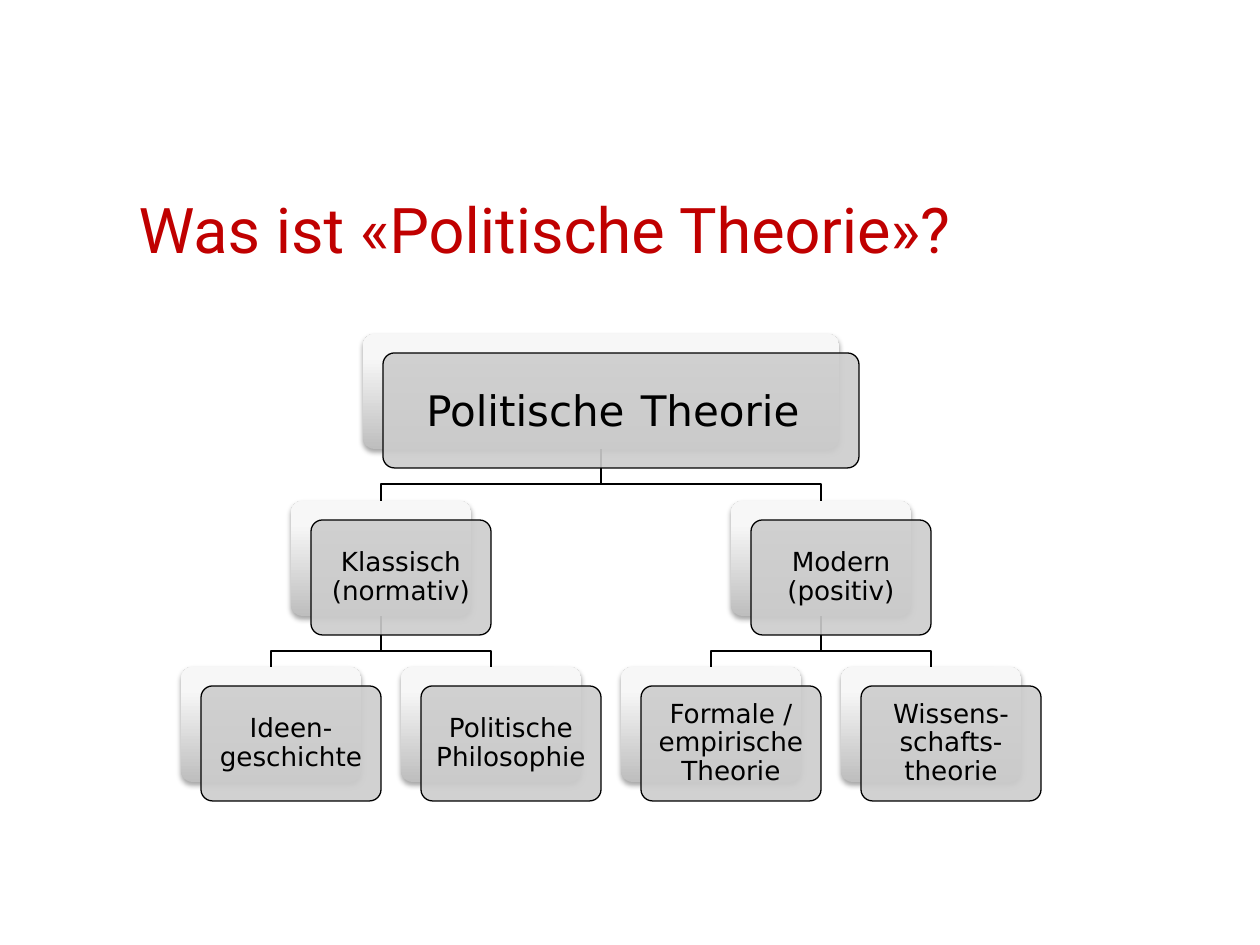
from dataclasses import dataclass

from lxml.etree import SubElement
from pptx import Presentation
from pptx.dml.color import RGBColor
from pptx.enum.shapes import MSO_SHAPE
from pptx.enum.text import MSO_ANCHOR, MSO_AUTO_SIZE, PP_ALIGN
from pptx.oxml.ns import qn
from pptx.util import Emu, Pt

SCALE = 914400 / 126  # EMU per px


@dataclass(frozen=True)
class Theme:
    title: RGBColor = RGBColor(0xC0, 0x00, 0x00)
    ink: RGBColor = RGBColor(0x00, 0x00, 0x00)
    card: RGBColor = RGBColor(0xCC, 0xCC, 0xCC)
    dark: RGBColor = RGBColor(0xBE, 0xBE, 0xBE)
    light: RGBColor = RGBColor(0xF7, 0xF7, 0xF7)
    head: str = "Roboto"
    body: str = "DejaVu Sans"
    big: int = 36
    root: int = 24
    gap: int = 29
    node: int = 15
    line: float = 0.75


@dataclass
class Node:
    x: int  # centre of the back card
    level: int
    runs: list
    kids: tuple = ()
    wide: int = 180
    inset: int = 11

    @property
    def top(self):
        return 334 + 167 * self.level - self.level // 2


HIGH = 115
SHIFT = (20, 19)  # front card against back card
BEND = 35


def px(value):
    return Emu(round(value * SCALE))


def apply(target, values):
    for name, value in values.items():
        setattr(target, name, value)


class Deck:
    def __init__(self, theme):
        self.theme = theme
        self.file = Presentation()
        apply(self.file, {"slide_width": px(1260), "slide_height": px(945)})
        self.slide = self.file.slides.add_slide(self.file.slide_layouts[5])

    def label(self, para, text, size, face, color):
        run = para.add_run()
        run.text = text
        apply(run.font, {"size": Pt(size), "name": face})
        run.font.color.rgb = color

    def title(self, text, x, y, w, h):
        shape = self.slide.shapes.title
        apply(shape, {"left": px(x), "top": px(y), "width": px(w), "height": px(h)})
        frame = shape.text_frame
        apply(frame, {"auto_size": MSO_AUTO_SIZE.NONE, "word_wrap": True,
                      "vertical_anchor": MSO_ANCHOR.BOTTOM})
        para = frame.paragraphs[0]
        para.alignment = PP_ALIGN.LEFT
        self.label(para, text, self.theme.big, self.theme.head, self.theme.title)

    def stroke(self, shape):
        shape.line.color.rgb = self.theme.ink
        shape.line.width = Pt(self.theme.line)

    def link(self, node, kid):
        """Draw the bent line from a node down to one of its kids."""
        foot = node.top + HIGH
        bend = foot + BEND
        pen = self.slide.shapes.build_freeform(node.x, foot, SCALE)
        pen.add_line_segments([(node.x, bend), (kid.x, bend), (kid.x, kid.top)],
                              close=False)
        shape = pen.convert_to_shape()
        shape.shadow.inherit = False
        shape.fill.background()
        self.stroke(shape)

    def card(self, x, y, w):
        shape = self.slide.shapes.add_shape(
            MSO_SHAPE.ROUNDED_RECTANGLE, px(x), px(y), px(w), px(HIGH))
        shape.adjustments[0] = 0.1
        shape.shadow.inherit = False
        return shape

    def back(self, x, y, w):
        shape = self.card(x, y, w)
        shape.fill.gradient()
        shape.fill.gradient_angle = 90
        stops = ((0, self.theme.dark), (0.8, self.theme.light))
        for stop, (place, color) in zip(shape.fill.gradient_stops, stops):
            stop.position = place
            stop.color.rgb = color
        shape.line.fill.background()
        effect = shape.element.spPr.find(qn("a:effectLst"))
        shade = SubElement(effect, qn("a:outerShdw"), blurRad=str(int(Pt(3.1))),
                           dist=str(int(Pt(1.8))), dir="5400000", rotWithShape="0")
        color = SubElement(shade, qn("a:srgbClr"), val=str(self.theme.ink))
        SubElement(color, qn("a:alpha"), val="35000")

    def front(self, x, y, node):
        shape = self.card(x, y, node.wide)
        shape.fill.solid()
        shape.fill.fore_color.rgb = self.theme.card
        color = shape.element.spPr.find(qn("a:solidFill"))[0]
        SubElement(color, qn("a:alpha"), val="90000")
        self.stroke(shape)
        frame = shape.text_frame
        sides = ("left", "top", "right", "bottom")
        apply(frame, {f"margin_{side}": px(node.inset) for side in sides})
        apply(frame, {"word_wrap": True, "vertical_anchor": MSO_ANCHOR.MIDDLE})
        para = frame.paragraphs[0]
        apply(para, {"alignment": PP_ALIGN.CENTER, "line_spacing": 0.9})
        for text, size in node.runs:
            self.label(para, text, size, self.theme.body, self.theme.ink)

    def links(self, node):
        for kid in node.kids:
            self.link(node, kid)
            self.links(kid)

    def cards(self, node):
        left = node.x - node.wide // 2
        self.back(left, node.top, node.wide)
        self.front(left + SHIFT[0], node.top + SHIFT[1], node)
        for kid in node.kids:
            self.cards(kid)


def main():
    theme = Theme()
    deck = Deck(theme)
    deck.title("Was ist «Politische Theorie»?", 126, 115, 1008, 157)

    branches = (
        ("Klassisch (normativ)", ("Ideen-geschichte", "Politische Philosophie")),
        ("Modern (positiv)", ("Formale / empirische Theorie",
                              "Wissens-schafts-theorie")),
    )
    kids = []
    for i, (name, leaves) in enumerate(branches):
        x = 381 + 440 * i
        ends = tuple(Node(x - 110 + 220 * j, 2, [(leaf, theme.node)])
                     for j, leaf in enumerate(leaves))
        kids.append(Node(x, 1, [(name, theme.node)], ends))
    space = (" ", theme.gap)
    words = [("Politische", theme.root), space, ("Theorie", theme.root), space]
    root = Node(601, 0, words, tuple(kids), wide=476, inset=16)

    deck.links(root)
    deck.cards(root)
    deck.file.save("out.pptx")


if __name__ == "__main__":
    main()
